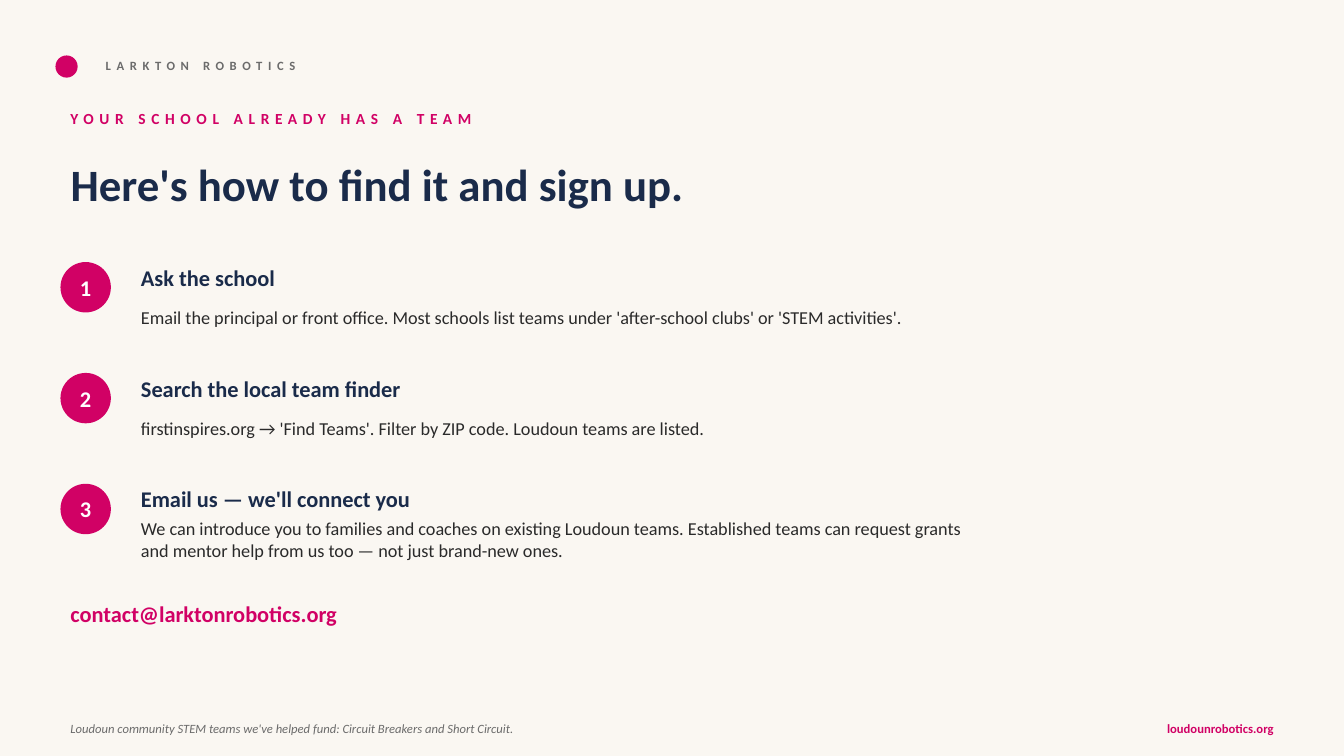
"""Build the slide that shows three steps to find and join a school robotics team."""
from dataclasses import dataclass

from pptx import Presentation
from pptx.dml.color import RGBColor
from pptx.enum.shapes import MSO_SHAPE
from pptx.enum.text import MSO_ANCHOR, MSO_AUTO_SIZE, PP_ALIGN
from pptx.shapes.autoshape import Shape
from pptx.slide import Slide
from pptx.util import Emu, Pt

OVAL = MSO_SHAPE.OVAL
TOP, MIDDLE = MSO_ANCHOR.TOP, MSO_ANCHOR.MIDDLE
LEFT, CENTER, RIGHT = PP_ALIGN.LEFT, PP_ALIGN.CENTER, PP_ALIGN.RIGHT
NO_AUTOFIT = MSO_AUTO_SIZE.NONE
EMU_PER_PX = 9144
TITLE_ONLY = 5


@dataclass(frozen=True)
class Theme:
    font: str = "Calibri"
    paper: str = "FAF7F2"
    accent: str = "D10165"
    navy: str = "1A2B4A"
    ink: str = "2A2A2A"
    muted: str = "6B6B6B"
    white: str = "FFFFFF"
    title: int = 32
    heading: int = 16
    body: int = 13
    kicker: int = 11
    small: int = 9


@dataclass(frozen=True)
class Box:
    x: int
    y: int
    w: int
    h: int


@dataclass(frozen=True)
class Style:
    size: int
    color: str
    bold: bool = True
    italic: bool = False
    align: PP_ALIGN = LEFT
    anchor: MSO_ANCHOR = MIDDLE
    tracking: int = 0


@dataclass(frozen=True)
class Label:
    box: Box
    text: str
    style: Style


@dataclass(frozen=True)
class Step:
    heading: str
    body: str


THEME = Theme()
TITLE = Style(THEME.title, THEME.navy, anchor=TOP)
HEADING = Style(THEME.heading, THEME.navy)
BODY = Style(THEME.body, THEME.ink, bold=False)
NUMBER = Style(THEME.heading, THEME.white, align=CENTER)

STEPS = [
    Step("Ask the school",
         "Email the principal or front office. Most schools list teams under "
         "'after-school clubs' or 'STEM activities'."),
    Step("Search the local team finder",
         "firstinspires.org → 'Find Teams'. Filter by ZIP code. Loudoun teams are listed."),
    Step("Email us — we'll connect you",
         "We can introduce you to families and coaches on existing Loudoun teams. "
         "Established teams can request grants and mentor help from us too — "
         "not just brand-new ones."),
]
STEP_TOP, STEP_PITCH = 260, 110

LABELS = [
    Label(Box(95, 50, 500, 30), "LARKTON ROBOTICS",
          Style(THEME.small, THEME.muted, tracking=4)),
    Label(Box(60, 100, 800, 35), "YOUR SCHOOL ALREADY HAS A TEAM",
          Style(THEME.kicker, THEME.accent, tracking=4)),
    Label(Box(60, 590, 1213, 150), "contact@larktonrobotics.org",
          Style(THEME.heading, THEME.accent, anchor=TOP)),
    Label(Box(60, 708, 1213, 30),
          "Loudoun community STEM teams we've helped fund: Circuit Breakers and Short Circuit.",
          Style(THEME.small, THEME.muted, bold=False, italic=True)),
    Label(Box(1033, 708, 240, 30), "loudounrobotics.org",
          Style(THEME.small, THEME.accent, align=RIGHT)),
]


def px(n: int) -> Emu:
    return Emu(n * EMU_PER_PX)


def place(box: Box) -> tuple[Emu, Emu, Emu, Emu]:
    return px(box.x), px(box.y), px(box.w), px(box.h)


def write(sp: Shape, text: str, style: Style) -> None:
    tf = sp.text_frame
    tf.word_wrap = True
    tf.auto_size = NO_AUTOFIT
    tf.vertical_anchor = style.anchor
    p = tf.paragraphs[0]
    p.alignment = style.align
    p.font.name = THEME.font
    p.font.size = Pt(style.size)
    p.font.bold = style.bold
    p.font.italic = style.italic
    p.font.color.rgb = RGBColor.from_string(style.color)
    r = p.add_run()
    r.text = text
    if style.tracking:
        r._r.get_or_add_rPr().set("spc", str(style.tracking * 100))


def add_label(s: Slide, label: Label) -> None:
    write(s.shapes.add_textbox(*place(label.box)), label.text, label.style)


def add_dot(s: Slide, box: Box) -> Shape:
    sp = s.shapes.add_shape(OVAL, *place(box))
    sp.shadow.inherit = False
    sp.fill.solid()
    sp.fill.fore_color.rgb = RGBColor.from_string(THEME.accent)
    sp.line.fill.background()
    return sp


def add_step(s: Slide, number: int, step: Step) -> None:
    y = STEP_TOP + (number - 1) * STEP_PITCH
    sp = add_dot(s, Box(60, y, 50, 50))
    tf = sp.text_frame
    tf.margin_left = tf.margin_right = tf.margin_top = tf.margin_bottom = 0
    write(sp, str(number), NUMBER)
    add_label(s, Label(Box(130, y - 5, 850, 40), step.heading, HEADING))
    add_label(s, Label(Box(130, y + 30, 850, 50), step.body, BODY))


def main() -> None:
    prs = Presentation()
    prs.slide_width, prs.slide_height = px(1333), px(750)
    s = prs.slides.add_slide(prs.slide_layouts[TITLE_ONLY])
    s.background.fill.solid()
    s.background.fill.fore_color.rgb = RGBColor.from_string(THEME.paper)

    title = s.shapes.title
    title.left, title.top, title.width, title.height = place(Box(60, 150, 1213, 115))
    write(title, "Here's how to find it and sign up.", TITLE)

    add_dot(s, Box(55, 55, 22, 22))
    for number, step in enumerate(STEPS, 1):
        add_step(s, number, step)
    for label in LABELS:
        add_label(s, label)
    prs.save("out.pptx")


if __name__ == "__main__":
    main()
